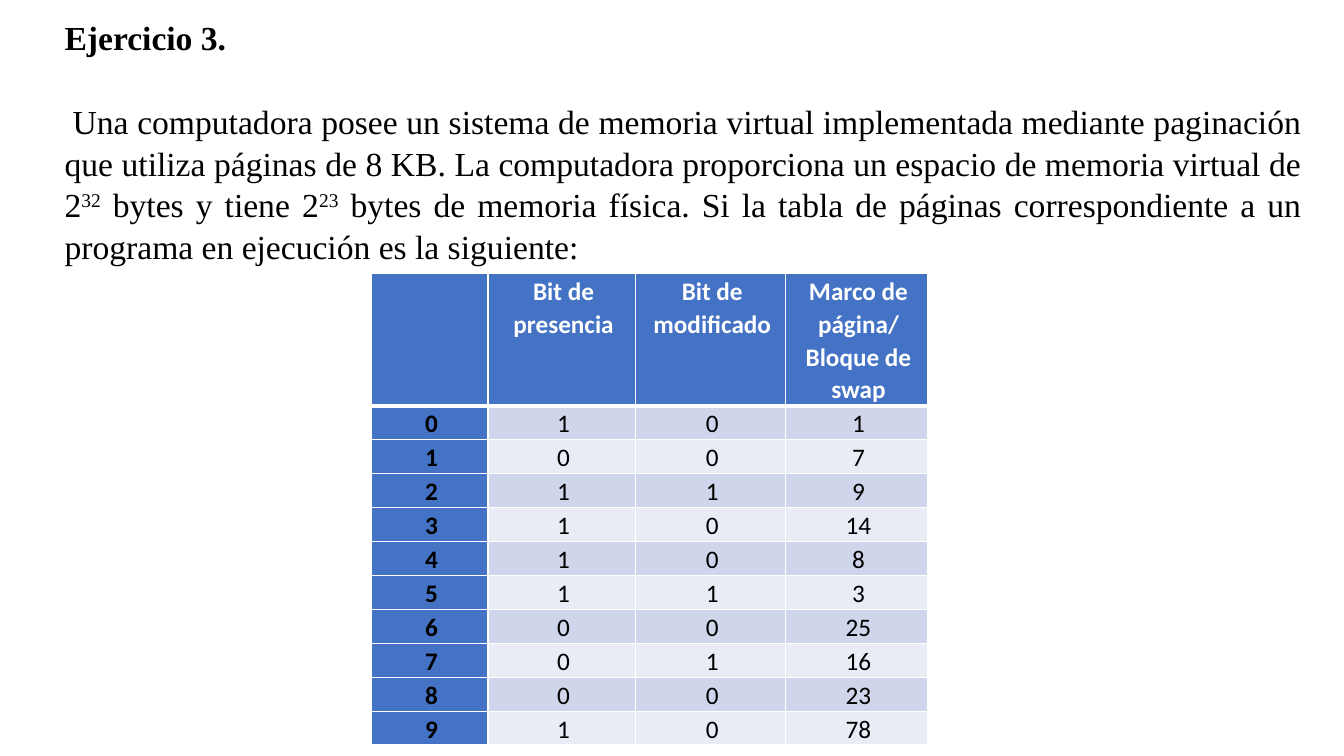
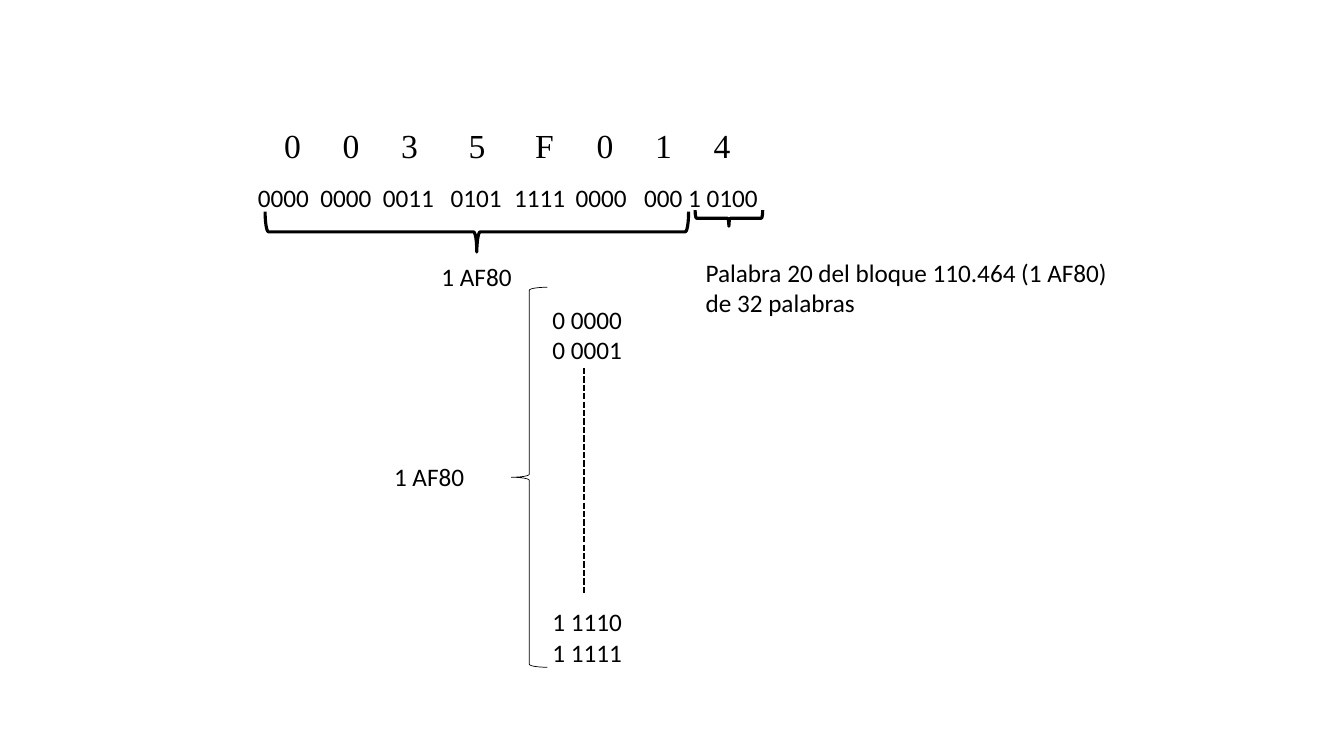
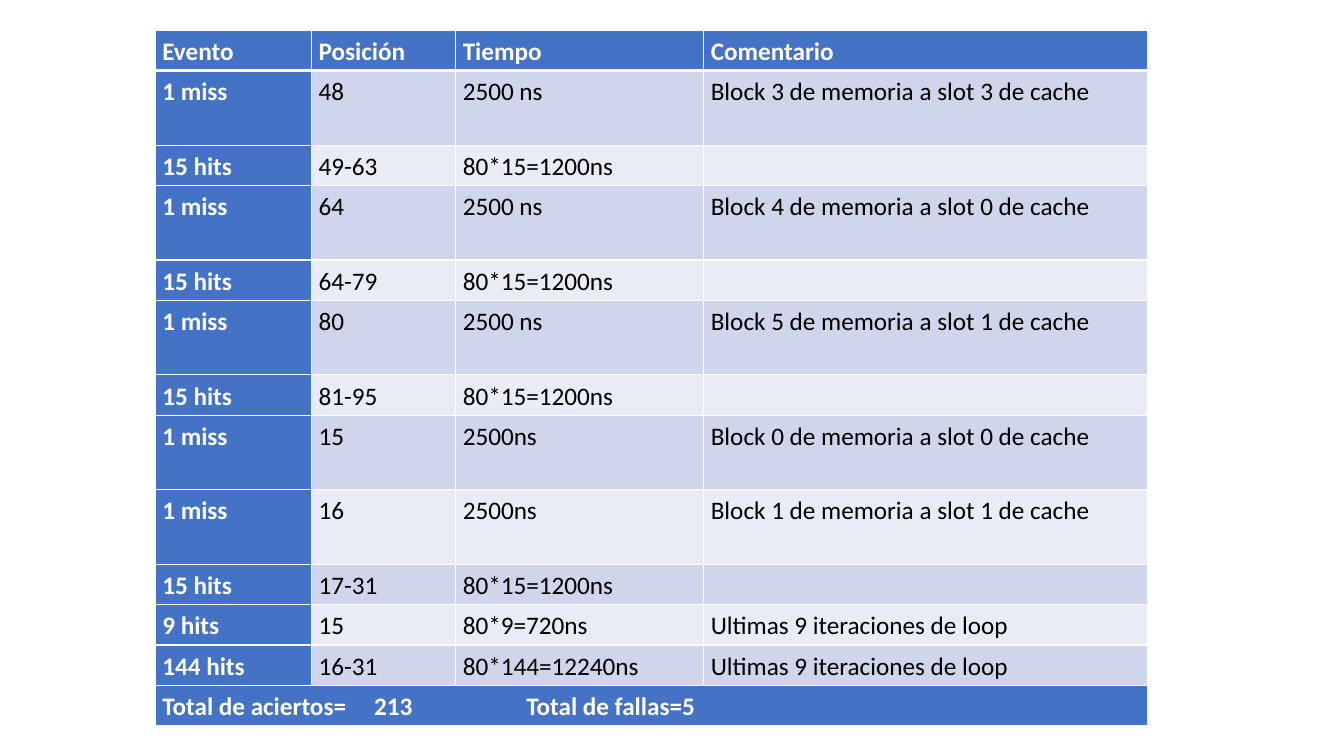
from lxml.etree import SubElement
from pptx import Presentation
from pptx.dml.color import RGBColor
from pptx.enum.dml import MSO_LINE
from pptx.enum.shapes import MSO_CONNECTOR, MSO_SHAPE
from pptx.enum.text import MSO_ANCHOR, MSO_AUTO_SIZE, PP_ALIGN
from pptx.oxml.ns import qn
from pptx.util import Inches, Pt

COLORS = {"ink": "000000", "white": "FFFFFF", "head": "4472C4",
          "odd": "CFD5EA", "even": "E9EBF5"}
SERIF, SANS = "Times New Roman", "Calibri"
BLANK, CONTENT = 6, 1


def color(name):
    return RGBColor.from_string(COLORS[name])


def box(*sizes):
    return [Inches(size) for size in sizes]


def add_tabs(para, stops):
    tabs = SubElement(para._p.get_or_add_pPr(), qn("a:tabLst"))
    for stop in stops:
        SubElement(tabs, qn("a:tab"), pos=str(Inches(stop)), algn="l")


class Deck:
    def __init__(self):
        self.prs = Presentation()
        self.prs.slide_width, self.prs.slide_height = box(13.33, 7.5)

    def start(self, layout=BLANK):
        self.slide = self.prs.slides.add_slide(self.prs.slide_layouts[layout])

    def style(self, para, size=18, face=SANS, ink="ink", bold=False):
        for run in para.runs:
            font = run.font
            font.size, font.name, font.bold = Pt(size), face, bold
            font.color.rgb = color(ink)

    def place(self, holder, at):
        """Move a placeholder and give it plain top-anchored text."""
        holder.left, holder.top, holder.width, holder.height = box(*at)
        frame = holder.text_frame
        frame.auto_size = MSO_AUTO_SIZE.NONE
        frame.vertical_anchor = MSO_ANCHOR.TOP
        para = frame.paragraphs[0]
        para.line_spacing = 1.03
        para.space_before = Pt(0)
        return para

    def title(self, text, at):
        para = self.place(self.slide.shapes.title, at)
        para.text = text
        para.alignment = PP_ALIGN.LEFT
        self.style(para, 24, SERIF, bold=True)

    def body(self, text, at):
        """Write justified text; parts between ^ marks are superscript."""
        para = self.place(self.slide.placeholders[1], at)
        para.alignment = PP_ALIGN.JUSTIFY
        for num, part in enumerate(text.split("^")):
            run = para.add_run()
            run.text = part
            if num % 2:
                run._r.get_or_add_rPr().set("baseline", "30000")
        self.style(para, 24, SERIF)
        props = para._p.get_or_add_pPr()
        props.set("marL", "0")
        props.set("indent", str(Inches(0.08)))
        SubElement(props, qn("a:buNone"))

    def text(self, lines, at, size=18, face=SANS, tabs=(), wrap=True):
        frame = self.slide.shapes.add_textbox(*box(*at)).text_frame
        frame.word_wrap = wrap
        frame.text = lines
        for para in frame.paragraphs:
            self.style(para, size, face)
            if tabs:
                add_tabs(para, tabs)

    def brace(self, at, width, turn=0):
        shape = self.slide.shapes.add_shape(MSO_SHAPE.LEFT_BRACE, *box(*at))
        shape.rotation = turn
        shape.shadow.inherit = False
        shape.fill.background()
        shape.line.color.rgb = color("ink")
        shape.line.width = Pt(width)

    def dash(self, *ends):
        line = self.slide.shapes.add_connector(MSO_CONNECTOR.STRAIGHT, *box(*ends))
        line.line.color.rgb = color("ink")
        line.line.width = Pt(1.5)
        line.line.dash_style = MSO_LINE.SQUARE_DOT
        SubElement(line._element.spPr, qn("a:effectLst"))

    def border(self, cell, row):
        props = cell._tc.get_or_add_tcPr()
        for side in ("lnL", "lnR", "lnT", "lnB"):
            thick = (row, side) in ((0, "lnB"), (1, "lnT"))
            line = SubElement(props, qn(f"a:{side}"), w=str(Pt(3 if thick else 1)))
            fill = SubElement(line, qn("a:solidFill"))
            SubElement(fill, qn("a:srgbClr"), val=COLORS["white"])

    def table(self, rows, at, widths, heights, insets, side="white",
              align=PP_ALIGN.LEFT, total=False):
        """Draw a banded table; side is the ink of the first column."""
        grid = self.slide.shapes.add_table(
            len(rows), len(widths), *box(*at, sum(widths), sum(heights))).table
        for col, width in zip(grid.columns, widths):
            col.width = Inches(width)
        for num, (row, height) in enumerate(zip(rows, heights)):
            grid.rows[num].height = Inches(height)
            last = total and num == len(rows) - 1
            for pos, text in enumerate(row):
                cell = grid.cell(num, pos)
                head = num == 0 or pos == 0 or last
                band = "head" if head else "odd" if num % 2 else "even"
                ink = "white" if num == 0 else side if head else "ink"
                self.border(cell, num)
                cell.fill.solid()
                cell.fill.fore_color.rgb = color(band)
                (cell.margin_left, cell.margin_top,
                 cell.margin_right, cell.margin_bottom) = box(*insets)
                para = cell.text_frame.paragraphs[0]
                para.text = text
                para.alignment = align
                para.line_spacing = 1.07
                self.style(para, ink=ink, bold=head)
        if total:
            grid.cell(len(rows) - 1, 0).merge(grid.cell(len(rows) - 1, len(widths) - 1))
        return grid


def pages(deck):
    deck.start(CONTENT)
    deck.title("Ejercicio 3.", (0.54, 0.11, 12.47, 0.6))
    deck.body("Una computadora posee un sistema de memoria virtual implementada "
              "mediante paginación que utiliza páginas de 8 KB. La computadora "
              "proporciona un espacio de memoria virtual de 2^32^ bytes y tiene "
              "2^23^ bytes de memoria física. Si la tabla de páginas "
              "correspondiente a un programa en ejecución es la siguiente:",
              (0.54, 0.94, 12.47, 1.77))
    bits = ["10", "00", "11", "10", "10", "11", "00", "01", "00", "10"]
    frames = [1, 7, 9, 14, 8, 3, 25, 16, 23, 78]
    rows = [["", "Bit de presencia", "Bit de modificado",
             "Marco de página/ Bloque de swap"]]
    rows += [[str(num), *pair, str(frame)]
             for num, (pair, frame) in enumerate(zip(bits, frames))]
    deck.table(rows, (3.68, 2.71), (1.16, 1.46, 1.49, 1.41),
               [1.29] + [0.33] * 10, (0.06, 0.01, 0.02, 0),
               side="ink", align=PP_ALIGN.CENTER)


def address(deck):
    deck.start()
    deck.text("\t".join("0035F014"), (2.72, 1.19, 6.67, 0.5), 24, SERIF,
              tabs=(0.58, 1.16, 1.83, 2.49, 3.1, 3.68, 4.26))
    deck.text("0000\t0000\t0011\t0101\t1111\t0000\t000 1 0100",
              (2.46, 1.76, 5.21, 0.4), tabs=(0.62, 1.24, 1.91, 2.54, 3.15, 3.83))
    deck.brace((7.15, 1.83, 0.16, 0.67), 2.25, 270)
    deck.brace((4.53, 0.2, 0.4, 4.2), 2.25, 270)
    deck.text("Palabra 20 del bloque 110.464 (1 AF80)\nde 32 palabras",
              (6.9, 2.5, 4.71, 0.71))
    deck.brace((5.07, 2.85, 0.36, 3.77), 0.5)
    for left, top in ((4.28, 2.54), (3.81, 4.53)):
        deck.text("1 AF80", (left, top, 0.9, 0.4), wrap=False)
    for words, top in (("0 0000\n0 0001", 2.97), ("1 1110\n1 1111", 5.97)):
        deck.text(words, (5.38, top, 1.23, 0.71))
    deck.dash(5.79, 3.65, 5.79, 5.88)


def events(deck):
    deck.start()
    load = "Block {} de memoria a slot {} de cache".format
    hits, loop = "80*15=1200ns", "Ultimas 9 iteraciones de loop"
    rows = [
        ["Evento", "Posición", "Tiempo", "Comentario"],
        ["1 miss", "48", "2500 ns", load(3, 3)],
        ["15 hits", "49-63", hits, ""],
        ["1 miss", "64", "2500 ns", load(4, 0)],
        ["15 hits", "64-79", hits, ""],
        ["1 miss", "80", "2500 ns", load(5, 1)],
        ["15 hits", "81-95", hits, ""],
        ["1 miss", "15", "2500ns", load(0, 0)],
        ["1 miss", "16", "2500ns", load(1, 1)],
        ["15 hits", "17-31", hits, ""],
        ["9 hits", "15", "80*9=720ns", loop],
        ["144 hits", "16-31", "80*144=12240ns", loop],
        ["Total de aciertos=\t213\tTotal de fallas=5", "", "", ""],
    ]
    heights = [0.74 if row[0] == "1 miss" else 0.4 for row in rows]
    grid = deck.table(rows, (1.54, 0.3), (1.55, 1.43, 2.46, 4.4), heights,
                      (0.07, 0.04, 0.06, 0), total=True)
    add_tabs(grid.cell(len(rows) - 1, 0).text_frame.paragraphs[0], (2.1, 3.61))


def main():
    deck = Deck()
    for draw in (pages, address, events):
        draw(deck)
    deck.prs.save("out.pptx")


if __name__ == "__main__":
    main()
